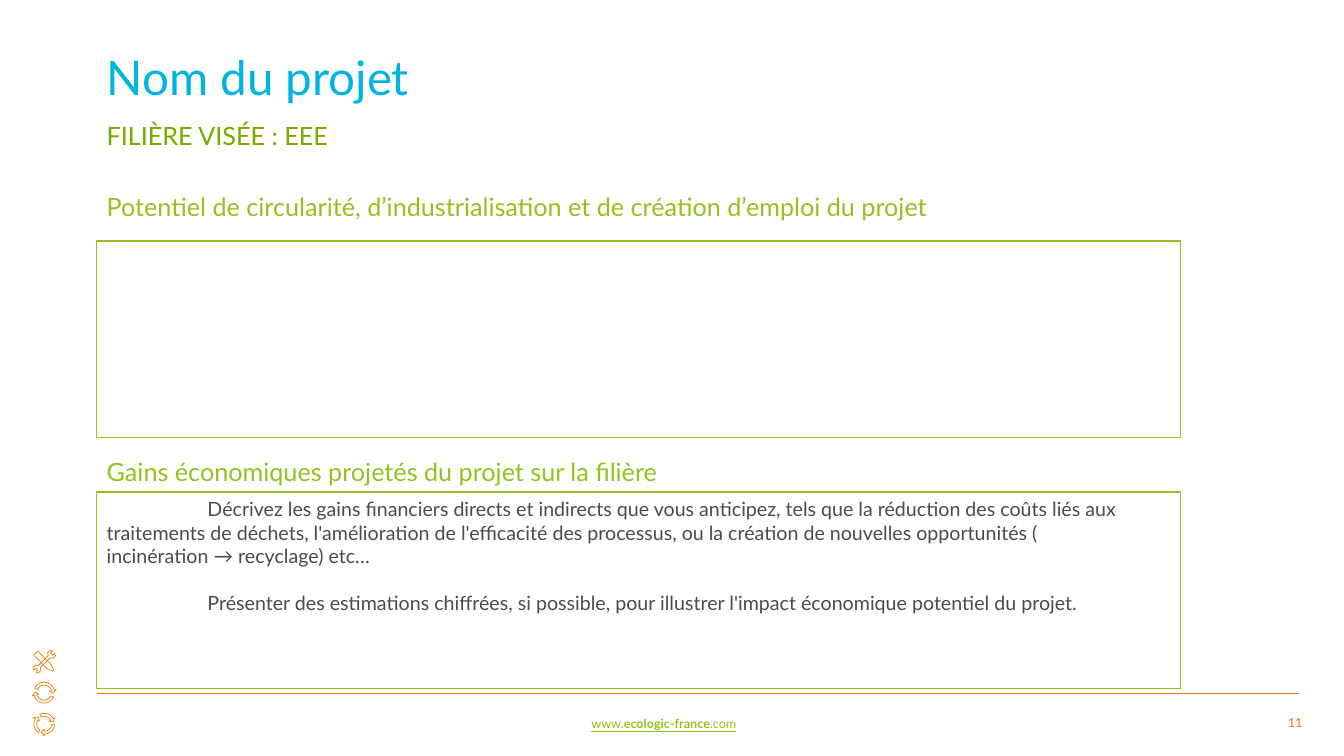
import math

from pptx import Presentation
from pptx.dml.color import RGBColor
from pptx.enum import shapes, text
from pptx.oxml import parse_xml
from pptx.oxml.ns import nsdecls
from pptx.util import Pt

FONT = "Lato"
BLUE, DARK_GREEN, GREEN = "00B4E2", "7AA701", "95C11F"
ORANGE, GREY, WHITE = "EE7F00", "4B4B4B", "FFFFFF"
LEFT, TEXT_WIDTH, BOX_WIDTH, BOX_HEIGHT = 69.1, 822.2, 774, 140.4

GAINS = (
    (
        "Décrivez les gains financiers directs et indirects que vous anticipez, "
        "tels que la réduction des coûts liés aux traitements de déchets, "
        "l'amélioration de l'efficacité des processus, ou la création de "
        "nouvelles opportunités (",
        "incinération → recyclage) etc…",
    ),
    (
        "Présenter des estimations chiffrées, si possible, pour illustrer "
        "l'impact économique potentiel du projet.",
    ),
)


def colour(value):
    """Turn a hex string into a colour."""
    return RGBColor.from_string(value)


def add_run(paragraph, wording, size, shade, bold=False, underline=False):
    """Append one formatted run."""
    run = paragraph.add_run()
    run.text = wording
    font = run.font
    font.name, font.size, font.bold, font.underline = FONT, Pt(size), bold, underline
    font.color.rgb = colour(shade)


def prepare_frame(shape):
    """Set wrapping, anchor and left alignment, and return the first paragraph."""
    frame = shape.text_frame
    frame.word_wrap = True
    frame.auto_size = text.MSO_AUTO_SIZE.NONE
    frame.vertical_anchor = text.MSO_ANCHOR.TOP
    frame.margin_left = frame.margin_right = Pt(7.2)
    frame.margin_top = frame.margin_bottom = Pt(3.6)
    paragraph = frame.paragraphs[0]
    paragraph.alignment = text.PP_ALIGN.LEFT
    return paragraph


def add_label(slide, left, top, width, height):
    """Add a text box and return its first paragraph."""
    box = slide.shapes.add_textbox(Pt(left), Pt(top), Pt(width), Pt(height))
    return prepare_frame(box)


def style_outline(shape, shade, width):
    """Give a shape a plain outline without shadow."""
    shape.shadow.inherit = False
    shape.line.color.rgb = colour(shade)
    shape.line.width = Pt(width)


def add_outline(slide, points):
    """Draw a closed thin orange outline."""
    builder = slide.shapes.build_freeform(Pt(points[0][0]), Pt(points[0][1]))
    builder.add_line_segments([(Pt(x), Pt(y)) for x, y in points[1:]])
    shape = builder.convert_to_shape()
    shape.fill.background()
    style_outline(shape, ORANGE, 0.5)


def add_arc_arrow(slide, x, y, start, sweep):
    """Draw a clockwise curved arrow around a centre."""
    end = start + sweep
    angles = [start + sweep * step / 16 for step in range(17)]
    polar = [(7.4, angle) for angle in angles]
    polar += [(8.8, end), (6.4, end + 20), (4, end)]
    polar += [(5.4, angle) for angle in reversed(angles)]
    add_outline(slide, [
        (x + radius * math.cos(math.radians(angle)),
         y + radius * math.sin(math.radians(angle)))
        for radius, angle in polar
    ])


def add_tools(slide, x, y):
    """Draw a crossed spanner and ruler."""
    spanner_end = [(-1, 5), (-2.8, 6.2), (-2.8, 8.6), (-1, 9.6), (-1, 7.4),
                   (1, 7.4), (1, 9.6), (2.8, 8.6), (2.8, 6.2), (1, 5)]
    spanner = spanner_end + [(-across, -along) for across, along in spanner_end]
    ruler = [(-2, -8.5), (2, -8.5), (2, 5), (0.6, 9), (-0.6, 9), (-2, 5)]
    for tool, angle in ((spanner, 45), (ruler, -45)):
        cosine, sine = math.cos(math.radians(angle)), math.sin(math.radians(angle))
        add_outline(slide, [(x + a * cosine - b * sine, y + a * sine + b * cosine)
                            for a, b in tool])


def add_icons(slide, x, top, pitch):
    """Stack the three repair, reuse and recycling icons."""
    add_tools(slide, x, top)
    for row, (count, start, sweep) in enumerate(((2, 25, 140), (3, 125, 85)), 1):
        for index in range(count):
            add_arc_arrow(slide, x, top + row * pitch, start + index * 360 / count, sweep)


def add_footer(slide, left, top, right):
    """Add the rule, web address and page number."""
    rule = slide.shapes.add_connector(
        shapes.MSO_CONNECTOR.STRAIGHT, Pt(left), Pt(top), Pt(right), Pt(top))
    rule.line.color.rgb = colour(ORANGE)
    rule.line.width = Pt(0.75)
    rule._element.spPr.append(parse_xml(f"<a:effectLst {nsdecls('a')}/>"))
    address = add_label(slide, left + 346.3, top + 12.2, 377.3, 18)
    for wording, bold in (("www.", False), ("ecologic-france", True), (".com", False)):
        add_run(address, wording, 9, GREEN, bold, underline=True)
    number = add_label(slide, right - 36.7, top + 11.5, 46.1, 18.7)
    number.alignment = text.PP_ALIGN.RIGHT
    add_run(number, "11", 9, ORANGE)


def add_heading(slide, left, top, width):
    """Fill the title placeholder and add the sector line below it."""
    title = slide.shapes.title
    title.left, title.top = Pt(left), Pt(top)
    title.width, title.height = Pt(width), Pt(44.6)
    paragraph = prepare_frame(title)
    paragraph.line_spacing = 0.9
    add_run(paragraph, "Nom du projet", 34, BLUE)
    sector = add_label(slide, left, top + 46.8, width, 28.8)
    add_run(sector, "FILIÈRE VISÉE : EEE", 18, DARK_GREEN)


def add_section(slide, left, top, box_top, heading, body=()):
    """Add a section heading and its framed answer box."""
    add_run(add_label(slide, left, top, TEXT_WIDTH, 28.8), heading, 18, GREEN)
    box = slide.shapes.add_shape(
        shapes.MSO_SHAPE.RECTANGLE, Pt(left), Pt(box_top), Pt(BOX_WIDTH), Pt(BOX_HEIGHT))
    box.fill.solid()
    box.fill.fore_color.rgb = colour(WHITE)
    style_outline(box, GREEN, 1)
    paragraph = prepare_frame(box)
    for index, lines in enumerate(body):
        if index:
            paragraph = box.text_frame.add_paragraph()
            paragraph.alignment = text.PP_ALIGN.LEFT
            paragraph.space_before = Pt(16.8)
        paragraph._p.get_or_add_pPr().set("indent", str(Pt(72)))
        for number, line in enumerate(lines):
            if number:
                paragraph.add_line_break()
            add_run(paragraph, line, 14, GREY)


def main():
    """Build and save the presentation."""
    presentation = Presentation()
    presentation.slide_width, presentation.slide_height = Pt(960), Pt(540)
    slide = presentation.slides.add_slide(presentation.slide_layouts[5])
    add_footer(slide, LEFT, 495.4, 928.1)
    add_icons(slide, 31.6, 472.6, 22.2)
    add_heading(slide, LEFT, 35.3, TEXT_WIDTH)
    add_section(slide, LEFT, 133.2, 172.1,
                "Potentiel de circularité, d’industrialisation et de création d’emploi du projet")
    add_section(slide, LEFT, 322.6, 351.4,
                "Gains économiques projetés du projet sur la filière", GAINS)
    presentation.save("out.pptx")


if __name__ == "__main__":
    main()
